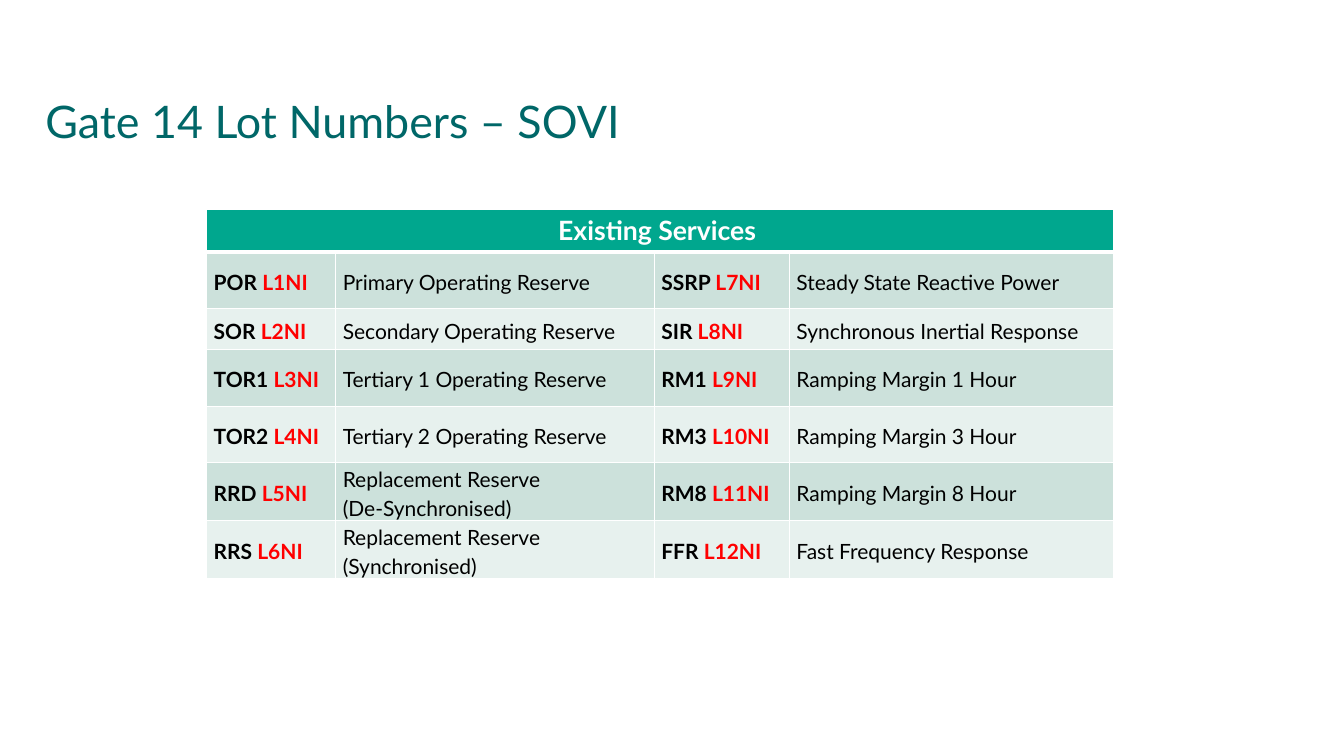
from lxml import etree
from pptx import Presentation
from pptx import util as u
from pptx.dml.color import RGBColor
from pptx.enum import text
from pptx.oxml import ns

TITLE = "Gate 14 Lot Numbers – SOVI"
HEADING = "Existing Services "
SERVICES = [
    ("POR", "Primary Operating Reserve"),
    ("SOR", "Secondary Operating Reserve"),
    ("TOR1", "Tertiary 1 Operating Reserve"),
    ("TOR2", "Tertiary 2 Operating Reserve"),
    ("RRD", "Replacement Reserve\n(De-Synchronised)"),
    ("RRS", "Replacement Reserve (Synchronised)"),
    ("SSRP", "Steady State Reactive Power"),
    ("SIR", "Synchronous Inertial Response"),
    ("RM1", "Ramping Margin 1 Hour"),
    ("RM3", "Ramping Margin 3 Hour"),
    ("RM8", "Ramping Margin 8 Hour"),
    ("FFR", "Fast Frequency Response"),
]
COLORS = {
    "title": "006768", "header": "00A78E", "odd": "CCE1DB", "even": "E7F1EE",
    "white": "FFFFFF", "black": "000000", "lot": "FF0000",
}
FONT = "Lato"
COLUMNS = [1.28, 3.16, 1.34, 3.22]
ROWS = [0.42, 0.56, 0.41, 0.56, 0.56, 0.56, 0.56]
LOTS_PER_COLUMN = len(ROWS) - 1


def color(name):
    return RGBColor.from_string(COLORS[name])


def write(frame, lines, size=15, bold=False, spacing=None, align=None):
    """Fill a text frame with lines, each a list of (words, colour name) spans."""
    for index, spans in enumerate(lines):
        para = frame.add_paragraph() if index else frame.paragraphs[0]
        para.line_spacing = spacing
        para.alignment = align
        for words, tone in spans:
            span = para.add_run()
            span.text = words
            span.font.name = FONT
            span.font.size = u.Pt(size)
            span.font.bold = bold
            span.font.color.rgb = color(tone)


def style_cell(cell, fill, top=1, bottom=1):
    properties = cell._tc.get_or_add_tcPr()
    for side, points in (("L", 1), ("R", 1), ("T", top), ("B", bottom)):
        line = etree.SubElement(properties, ns.qn(f"a:ln{side}"), w=str(u.Pt(points)))
        solid = etree.SubElement(line, ns.qn("a:solidFill"))
        etree.SubElement(solid, ns.qn("a:srgbClr"), val=COLORS["white"])
    cell.fill.solid()
    cell.fill.fore_color.rgb = color(fill)


def fill_service_cell(cell, row, lines, bold=False):
    style_cell(cell, "odd" if row % 2 else "even", top=3 if row == 1 else 1)
    cell.vertical_anchor = text.MSO_ANCHOR.MIDDLE
    cell.margin_left = cell.margin_right = u.Inches(0.07)
    cell.margin_top = cell.margin_bottom = 0
    write(cell.text_frame, lines, bold=bold, spacing=1.15)


def add_title(page):
    box = page.shapes.add_textbox(*map(u.Inches, (0.45, 0.99, 11.5, 1.45)))
    frame = box.text_frame
    frame.word_wrap = True
    frame.margin_left = frame.margin_right = frame.margin_top = frame.margin_bottom = 0
    write(frame, [[(TITLE, "title")]], size=32, spacing=0.9)


def add_services(page):
    place = map(u.Inches, (2.05, 2.08, sum(COLUMNS), sum(ROWS)))
    table = page.shapes.add_table(len(ROWS), len(COLUMNS), *place).table
    for column, width in zip(table.columns, COLUMNS):
        column.width = u.Inches(width)
    for row, height in zip(table.rows, ROWS):
        row.height = u.Inches(height)

    heading = table.cell(0, 0)
    heading.merge(table.cell(0, len(COLUMNS) - 1))
    for column in range(len(COLUMNS)):
        style_cell(table.cell(0, column), "header", bottom=3)
    write(heading.text_frame, [[(HEADING, "white")]], size=19, bold=True,
          align=text.PP_ALIGN.CENTER)

    for index, (code, name) in enumerate(SERVICES):
        pair, offset = divmod(index, LOTS_PER_COLUMN)
        row, column = offset + 1, pair * 2
        label = [(f"{code} ", "black"), (f"L{index + 1}NI", "lot")]
        fill_service_cell(table.cell(row, column), row, [label], bold=True)
        lines = [[(line, "black")] for line in name.split("\n")]
        fill_service_cell(table.cell(row, column + 1), row, lines)


def main():
    deck = Presentation()
    deck.slide_width, deck.slide_height = u.Inches(13.33), u.Inches(7.5)
    page = deck.slides.add_slide(deck.slide_layouts[6])
    add_title(page)
    add_services(page)
    deck.save("out.pptx")


if __name__ == "__main__":
    main()
